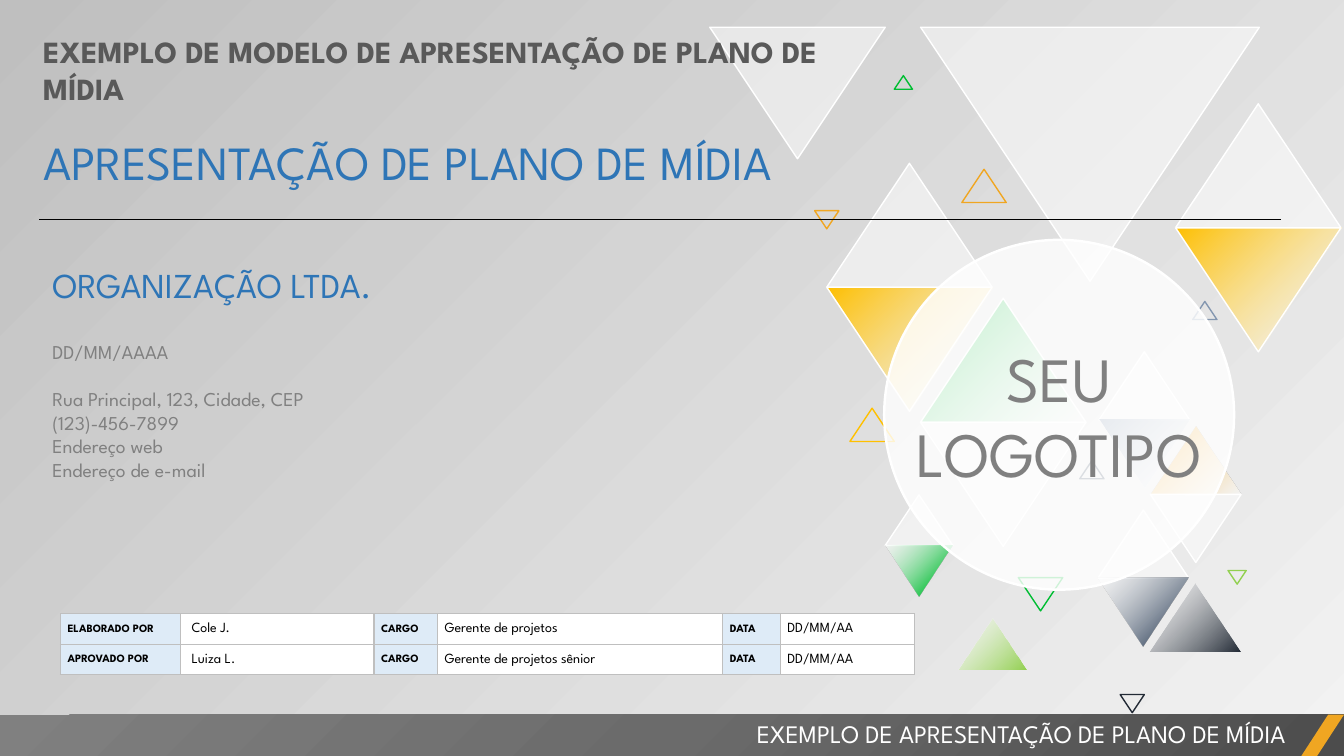
"""Build the cover slide of a media plan presentation on a grid of 1333 by 750 units."""
from lxml import etree
from pptx import Presentation
from pptx.dml.color import RGBColor
from pptx.enum.shapes import MSO_CONNECTOR, MSO_SHAPE
from pptx.enum.text import MSO_ANCHOR, MSO_AUTO_SIZE, PP_ALIGN
from pptx.oxml import parse_xml
from pptx.oxml.ns import nsdecls, qn
from pptx.util import Inches, Pt

TRIANGLE, ELLIPSE = MSO_SHAPE.ISOSCELES_TRIANGLE, MSO_SHAPE.OVAL
BAR, SLANT = MSO_SHAPE.RECTANGLE, MSO_SHAPE.PARALLELOGRAM
LEFT, CENTER, RIGHT = PP_ALIGN.LEFT, PP_ALIGN.CENTER, PP_ALIGN.RIGHT
MIDDLE, GROW = MSO_ANCHOR.MIDDLE, MSO_AUTO_SIZE.SHAPE_TO_FIT_TEXT
STRAIGHT = MSO_CONNECTOR.STRAIGHT
FONT = "League Spartan"
U = Inches(0.01)
COLS, ROWS = 1333, 750
rgb = RGBColor.from_string
DIAGONAL = '<a:lin ang="13500000" scaled="0"/>'
CORNER = '<a:path path="circle"><a:fillToRect l="100000" t="100000"/></a:path>'


def paint(fill, holder, stops, shade=DIAGONAL):
    """Fill with (position, colour, opacity) stops; a single stop gives a flat colour."""
    fill.gradient()
    colours = [f'<a:srgbClr val="{c}"><a:alpha val="{a * 1000}"/></a:srgbClr>' for _, c, a in stops]
    if len(stops) == 1:
        xml = f'<a:solidFill {nsdecls("a")}>{colours[0]}</a:solidFill>'
    else:
        gs = "".join(f'<a:gs pos="{stop[0] * 1000}">{c}</a:gs>' for stop, c in zip(stops, colours))
        xml = f'<a:gradFill {nsdecls("a")} rotWithShape="1"><a:gsLst>{gs}</a:gsLst>{shade}</a:gradFill>'
    old = next(holder.iter(qn("a:gradFill")))
    old.getparent().replace(old, parse_xml(xml))


def write(tf, lines, align=LEFT):
    """Write (text, size, colour, bold, space before) lines as paragraphs."""
    for i, (text, size, colour, bold, before) in enumerate(lines):
        p = tf.add_paragraph() if i else tf.paragraphs[0]
        p.text, p.alignment = text, align
        p.space_before = Pt(before)
        p.font.name, p.font.size, p.font.bold = FONT, Pt(size), bold
        p.font.color.rgb = rgb(colour)


prs = Presentation()
prs.slide_width, prs.slide_height = COLS * U, ROWS * U
s = prs.slides.add_slide(prs.slide_layouts[6])
paint(s.background.fill, s.element, [(0, "F2F2F2", 40), (100, "BFBFBF", 100)])

GLASS = [(0, "FFFFFF", 50)]
GOLD, STEEL, INK, LIME = [
    [(0, c, 100), (100, "FFFFFF", 50)] for c in ("FFC000", "8497B0", "222A35", "92D050")]
GREEN, SLATE, AMBER = [
    [(0, "FFFFFF", 50), (82, c, 100)] for c in ("00BD32", "44546A", "F0A622")]

# left, top, width, upper fill, lower fill
diamonds = [
    (820, 162, 164, GLASS, GOLD), (913, 296, 164, GREEN, GLASS),
    (913, 27, 336, None, GLASS), (1140, 579, 90, INK, None),
    (1089, 506, 90, GLASS, SLATE), (1090, 349, 90, GLASS, STEEL),
    (1141, 423, 90, AMBER, GLASS), (951, 614, 67, LIME, None),
    (878, 491, 67, GLASS, GREEN), (1166, 103, 164, GLASS, GOLD),
    (704, 27, 174, None, GLASS),
]
# left, top, width, points down, line colour
outlines = [
    (1010, 573, 44, True, "00BD32"), (843, 405, 44, False, "FFC000"),
    (1071, 457, 24, False, "44546A"), (1111, 689, 24, True, "222A35"),
    (808, 209, 24, True, "F0A622"), (1183, 299, 24, False, "8497B0"),
    (887, 75, 18, False, "00BD32"), (1218, 566, 18, True, "92D050"),
    (954, 168, 44, False, "F0A622"),
]
triangles = []
for x, y, w, upper, lower in diamonds:
    if upper:
        triangles.append((x, y, w, False, upper, "FFFFFF"))
    if lower:
        triangles.append((x, y + 0.75 * w if upper else y, w, True, lower, "FFFFFF"))
triangles += [(x, y, w, down, None, line) for x, y, w, down, line in outlines]

group = s.shapes.add_group_shape()
for x, y, w, down, stops, line in triangles:
    sp = group.shapes.add_shape(TRIANGLE, int(x * U), int(y * U), w * U, int(0.75 * w * U))
    sp.shadow.inherit = False
    sp.rotation = 180 if down else 0
    if stops:
        paint(sp.fill, sp.element, stops)
    else:
        sp.fill.background()
    if stops and stops != GLASS and w < 100:
        sp.line.fill.background()
    else:
        sp.line.color.rgb, sp.line.width = rgb(line), Pt(1)

footer = s.shapes.add_shape(BAR, 0, 709 * U, COLS * U, 42 * U)
paint(footer.fill, footer.element,
      [(0, "4C4C4C", 100), (50, "6B6B6B", 100), (100, "808080", 100)], CORNER)
accent = s.shapes.add_shape(SLANT, 1290 * U, 709 * U, 43 * U, 42 * U)
accent.adjustments[0] = 0.65
accent.fill.solid()
accent.fill.fore_color.rgb = rgb("F0A622")
for sp in (footer, accent):
    sp.shadow.inherit = False
    sp.line.fill.background()

GREY = "808080"
texts = [
    (33, 28, 789, 84, LEFT,
     [("EXEMPLO DE MODELO DE APRESENTAÇÃO DE PLANO DE MÍDIA", 22, "595959", True, 0)]),
    (525, 708, 760, 40, RIGHT,
     [("EXEMPLO DE APRESENTAÇÃO DE PLANO DE MÍDIA", 18, "FFFFFF", False, 0)]),
    (33, 127, 1255, 67, LEFT, [("APRESENTAÇÃO DE PLANO DE MÍDIA", 34, "2E75B6", False, 0)]),
    (42, 257, 908, 227, LEFT,
     [("ORGANIZAÇÃO LTDA.", 25, "2E75B6", False, 0),
      ("DD/MM/AAAA", 14, GREY, False, 24),
      ("Rua Principal, 123, Cidade, CEP", 14, GREY, False, 17),
      ("(123)-456-7899", 14, GREY, False, 0),
      ("Endereço web", 14, GREY, False, 0),
      ("Endereço de e-mail", 14, GREY, False, 0)]),
]
for x, y, w, h, align, lines in texts:
    tf = s.shapes.add_textbox(x * U, y * U, w * U, h * U).text_frame
    tf.word_wrap, tf.auto_size = True, GROW
    write(tf, lines, align)

rule = s.shapes.add_connector(STRAIGHT, 39 * U, 218 * U, 1271 * U, 218 * U)
rule.line.color.rgb, rule.line.width = rgb("000000"), Pt(0.5)
etree.SubElement(rule.element.spPr, qn("a:effectLst"))

logo = s.shapes.add_shape(ELLIPSE, 877 * U, 238 * U, 347 * U, 347 * U)
logo.shadow.inherit = False
paint(logo.fill, logo.element, [(0, "FFFFFF", 81)])
logo.line.color.rgb, logo.line.width = rgb("FFFFFF"), Pt(1.75)
tf = logo.text_frame
tf.margin_left = tf.margin_right = tf.margin_top = tf.margin_bottom = 0
tf.word_wrap, tf.vertical_anchor = False, MIDDLE
write(tf, [("SEU", 45, GREY, False, 0), ("LOGOTIPO", 45, GREY, False, 0)], CENTER)

people = [
    ("ELABORADO POR", "Cole J.", "CARGO", "Gerente de projetos", "DATA", "DD/MM/AA"),
    ("APROVADO POR", "Luiza L.", "CARGO", "Gerente de projetos sênior", "DATA", "DD/MM/AA"),
]
widths = [119, 192, 63, 283, 57, 133]
table = s.shapes.add_table(len(people), len(widths), 60 * U, 609 * U, sum(widths) * U, 60 * U).table
table.first_row = table.horz_banding = False
for column, w in zip(table.columns, widths):
    column.width = w * U
for i, row in enumerate(people):
    table.rows[i].height = 30 * U
    for j, text in enumerate(row):
        label = j % 2 == 0
        cell = table.cell(i, j)
        cell.vertical_anchor = MIDDLE
        cell.margin_top = cell.margin_bottom = 0
        cell.margin_left, cell.margin_right = (11 if j == 1 else 7) * U, 7 * U
        write(cell.text_frame, [(text, 8 if label else 10, "000000", label, 0)])
        cell.text_frame.paragraphs[0].line_spacing = 1.07
        tcPr = cell._tc.get_or_add_tcPr()
        for side in ("lnL", "lnR", "lnT", "lnB"):
            tcPr.append(parse_xml(
                f'<a:{side} {nsdecls("a")} w="12700"><a:solidFill><a:srgbClr val="BFBFBF"/>'
                f'</a:solidFill></a:{side}>'))
        cell.fill.solid()
        cell.fill.fore_color.rgb = rgb("DEEBF7" if label else "FFFFFF")

prs.save("out.pptx")
